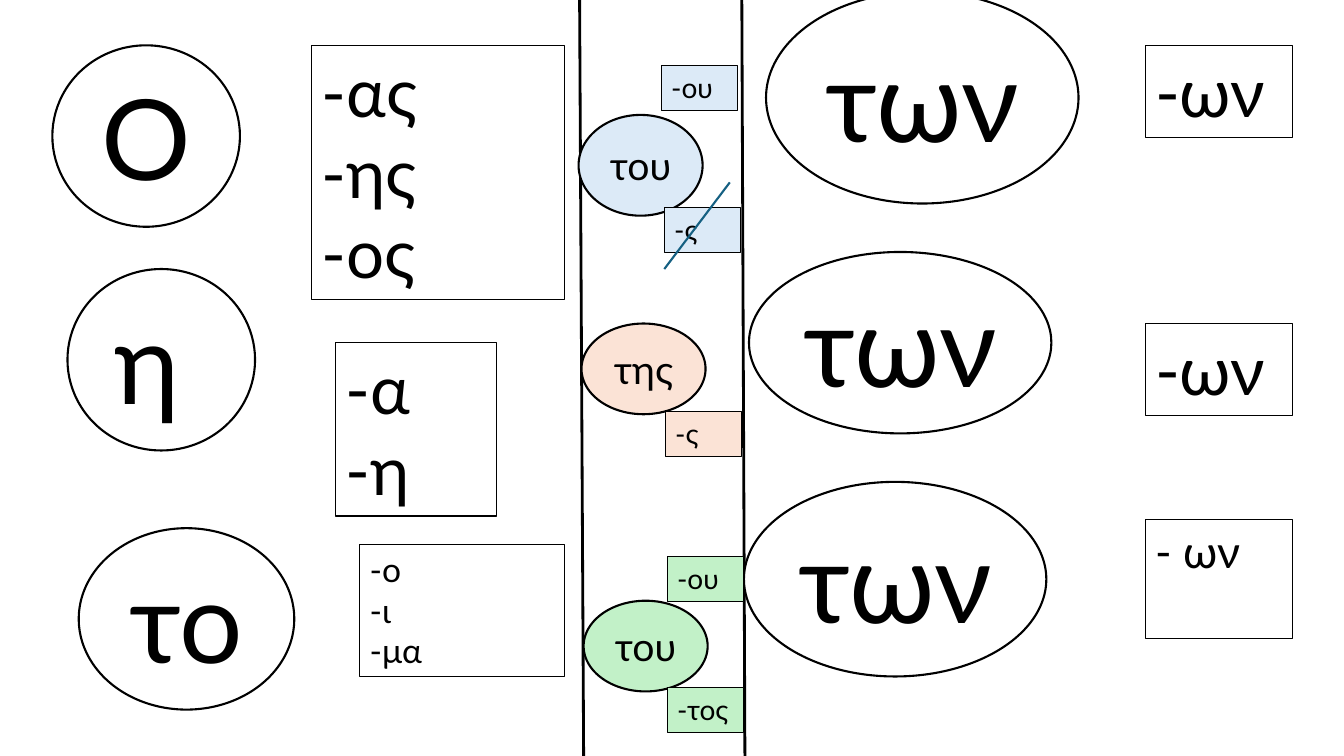
from pptx import Presentation
from pptx.dml.color import RGBColor
from pptx.enum.shapes import MSO_CONNECTOR, MSO_SHAPE
from pptx.enum.text import MSO_ANCHOR, PP_ALIGN
from pptx.oxml.ns import qn
from pptx.util import Pt
from lxml import etree

FONT = "Lato"
BLACK, WHITE, TEAL = "000000", "FFFFFF", "156082"
BLUE, PEACH, GREEN = "DCEAF7", "FBE3D6", "C2F1C8"
TAG_SIZE = (54.7, 32.4)

DIVIDERS = [((529.9, 0), (532.1, 540)), ((414, 0), (416.9, 540))]

# text, (left, top, width, height), font size, fill
ARTICLES = [
    ("Ο ", (37.4, 32.4, 134, 129.6), 80, WHITE),
    ("η ", (48.2, 192.2, 134, 129.6), 80, WHITE),
    ("το ", (56.2, 377.3, 154, 129.6), 80, WHITE),
    ("των ", (547.2, -5.8, 223.2, 151.2), 80, WHITE),
    ("των ", (535, 180, 216, 129.6), 80, WHITE),
    ("των ", (531.4, 344.2, 216, 139), 80, WHITE),
    ("του ", (413.3, 82.1, 88.6, 72), 28, BLUE),
    ("της ", (415.4, 231.1, 88.6, 64.8), 28, PEACH),
    ("του ", (416.9, 429.1, 88.6, 64.8), 28, GREEN),
]

# text, (left, top, width, height), font size
ENDINGS = [
    ("-ας\n-ης\n-ος", (222.5, 32.4, 180.7, 181.4), 48),
    ("-α\n-η", (239.8, 244.8, 115.2, 123.8), 48),
    ("-ο\n-ι\n-μα", (257, 388.8, 146.2, 94.3), 24),
    ("-ων", (818, 32.4, 105, 65.5), 48),
    ("-ων", (818, 231.1, 105, 65.5), 48),
    ("- ων", (818, 370.8, 105, 85), 32),
]

# text, (left, top), fill
GENITIVE_TAGS = [
    ("-ου", (472.3, 46.8), BLUE),
    ("-ς", (474.5, 148.3), BLUE),
    ("-ς", (475.2, 293.8), PEACH),
    ("-ου", (476.6, 397.4), GREEN),
    ("-τος", (476.6, 491), GREEN),
]


def color(hex_string):
    return RGBColor.from_string(hex_string)


def set_outline(line, hex_string, width):
    line.color.rgb = color(hex_string)
    line.width = Pt(width)


def set_text(text_frame, text, size, alignment):
    text_frame.word_wrap = True
    text_frame.text = text
    for paragraph in text_frame.paragraphs:
        paragraph.alignment = alignment
        for run in paragraph.runs:
            run.font.name = FONT
            run.font.size = Pt(size)
            run.font.color.rgb = color(BLACK)


def add_line(slide, start, end, hex_string, width):
    points = [Pt(value) for value in (*start, *end)]
    connector = slide.shapes.add_connector(MSO_CONNECTOR.STRAIGHT, *points)
    set_outline(connector.line, hex_string, width)
    etree.SubElement(connector._element.spPr, qn("a:effectLst"))


def add_ellipse(slide, text, bounds, size, fill):
    shape = slide.shapes.add_shape(MSO_SHAPE.OVAL, *map(Pt, bounds))
    shape.shadow.inherit = False
    shape.fill.solid()
    shape.fill.fore_color.rgb = color(fill)
    set_outline(shape.line, BLACK, 1.5)
    shape.text_frame.vertical_anchor = MSO_ANCHOR.MIDDLE
    set_text(shape.text_frame, text, size, PP_ALIGN.CENTER)


def add_box(slide, text, bounds, size, fill=None):
    box = slide.shapes.add_textbox(*map(Pt, bounds))
    if fill:
        box.fill.solid()
        box.fill.fore_color.rgb = color(fill)
    set_outline(box.line, BLACK, 0.75)
    set_text(box.text_frame, text, size, PP_ALIGN.LEFT)


def main():
    presentation = Presentation()
    presentation.slide_width = Pt(960)
    presentation.slide_height = Pt(540)
    slide = presentation.slides.add_slide(presentation.slide_layouts[6])

    for start, end in DIVIDERS:
        add_line(slide, start, end, BLACK, 2)
    for text, bounds, size, fill in ARTICLES:
        add_ellipse(slide, text, bounds, size, fill)
    for text, bounds, size in ENDINGS:
        add_box(slide, text, bounds, size)
    for text, corner, fill in GENITIVE_TAGS:
        add_box(slide, text, corner + TAG_SIZE, 20, fill)
    add_line(slide, (521.3, 130.3), (474.5, 192.2), TEAL, 1.5)

    presentation.save("out.pptx")


if __name__ == "__main__":
    main()
